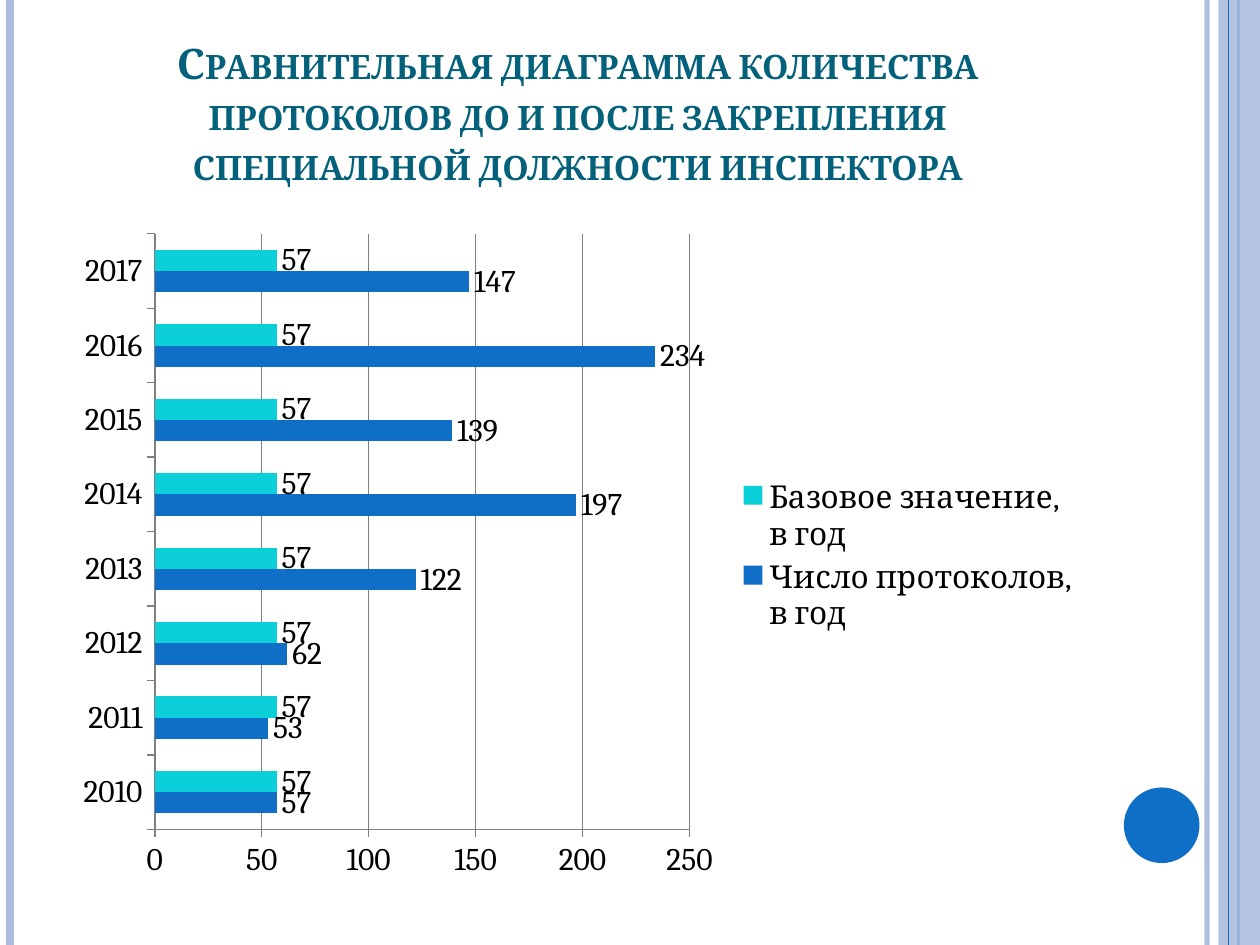
from lxml import etree
from pptx import Presentation
from pptx.chart.data import CategoryChartData
from pptx.dml.color import RGBColor
from pptx.enum.chart import XL_CHART_TYPE, XL_LABEL_POSITION, XL_LEGEND_POSITION, XL_TICK_MARK
from pptx.enum.shapes import MSO_CONNECTOR, MSO_SHAPE
from pptx.enum.text import MSO_ANCHOR, PP_ALIGN
from pptx.oxml.ns import qn
from pptx.util import Inches, Pt

BAR_CLUSTERED = XL_CHART_TYPE.BAR_CLUSTERED
OUTSIDE_END = XL_LABEL_POSITION.OUTSIDE_END
LEGEND_RIGHT = XL_LEGEND_POSITION.RIGHT
TICK_OUTSIDE = XL_TICK_MARK.OUTSIDE
STRAIGHT = MSO_CONNECTOR.STRAIGHT
RECTANGLE, OVAL = MSO_SHAPE.RECTANGLE, MSO_SHAPE.OVAL
BOTTOM, CENTER = MSO_ANCHOR.BOTTOM, PP_ALIGN.CENTER

PALE = RGBColor(0xAB, 0xBB, 0xDF)
BLUE = RGBColor(0x0F, 0x6F, 0xC6)
SKY = RGBColor(0x00, 0x9D, 0xD9)
CYAN = RGBColor(0x0B, 0xD0, 0xD9)
TEAL = RGBColor(0x04, 0x61, 0x7B)
GRAY = RGBColor(0x80, 0x80, 0x80)
BLACK = RGBColor(0, 0, 0)

FONT = "Cambria"
WIDTH, HEIGHT = 10, 7.5
LEFT, CONTENT_WIDTH = 0.5, 8.17

TITLE = ("Сравнительная диаграмма количества протоколов до и после "
         "закрепления специальной должности инспектора")
YEARS = [str(year) for year in range(2010, 2018)]
BASELINE = 57
SERIES = [
    ("Число протоколов, в год", [57, 53, 62, 122, 197, 139, 234, 147], BLUE),
    ("Столбец1", [], SKY),
    ("Базовое значение, в год", [BASELINE] * len(YEARS), CYAN),
]
# x, colour, width in points, opacity in percent
BACK_STRIPES = [(9.58, PALE, 3, 93), (0.08, PALE, 4.5, 100), (9.83, BLUE, 1.5, 100)]
FRONT_STRIPES = [(9.75, BLUE, 0.75, 100)]


def set_opacity(fill_parent, percent):
    color = fill_parent.find(".//" + qn("a:srgbClr"))
    etree.SubElement(color, qn("a:alpha")).set("val", str(percent * 1000))


def add_stripes(slide, stripes):
    for x, color, width, opacity in stripes:
        stripe = slide.shapes.add_connector(
            STRAIGHT, Inches(x), 0, Inches(x), Inches(HEIGHT))
        stripe.line.color.rgb = color
        stripe.line.width = Pt(width)
        properties = stripe._element.spPr
        if opacity < 100:
            set_opacity(properties, opacity)
        etree.SubElement(properties, qn("a:effectLst"))


def add_plain_shape(slide, kind, box, color):
    shape = slide.shapes.add_shape(kind, *map(Inches, box))
    shape.shadow.inherit = False
    shape.fill.solid()
    shape.fill.fore_color.rgb = color
    shape.line.fill.background()
    return shape


def add_text(slide, text, box, size, color, bold=False, small_caps=False):
    frame = slide.shapes.add_textbox(*map(Inches, box)).text_frame
    frame.word_wrap = True
    frame.vertical_anchor = BOTTOM
    para = frame.paragraphs[0]
    para.alignment = CENTER
    span = para.add_run()
    span.text = text
    span.font.name, span.font.size, span.font.bold = FONT, Pt(size), bold
    span.font.color.rgb = color
    if small_caps:
        span.font._element.set("cap", "small")


def style_line(line):
    line.color.rgb = GRAY
    line.width = Pt(0.8)


def add_protocol_chart(slide, box):
    data = CategoryChartData()
    data.categories = YEARS
    for name, values, _ in SERIES:
        data.add_series(name, values)
    chart = slide.shapes.add_chart(BAR_CLUSTERED, *map(Inches, box), data).chart
    chart.has_title = False
    chart.font.name, chart.font.size = FONT, Pt(18)
    chart.font.color.rgb = BLACK
    chart.has_legend = True
    chart.legend.position = LEGEND_RIGHT
    chart.legend.include_in_layout = False

    for axis in (chart.category_axis, chart.value_axis):
        axis.major_tick_mark = TICK_OUTSIDE
        style_line(axis.format.line)
    chart.value_axis.has_major_gridlines = True
    style_line(chart.value_axis.major_gridlines.format.line)

    plot = chart.plots[0]
    plot.vary_by_categories = False
    plot.gap_width, plot.overlap = 150, 0
    for series, (_, _, color) in zip(plot.series, SERIES):
        series.format.fill.solid()
        series.format.fill.fore_color.rgb = color
        series.data_labels.show_value = True
        series.data_labels.position = OUTSIDE_END


def main():
    deck = Presentation()
    deck.slide_width, deck.slide_height = Inches(WIDTH), Inches(HEIGHT)
    slide = deck.slides.add_slide(deck.slide_layouts[6])

    add_stripes(slide, BACK_STRIPES)
    band = add_plain_shape(slide, RECTANGLE, (9.67, 0, WIDTH - 9.67, HEIGHT), PALE)
    set_opacity(band._element.spPr, 87)
    add_stripes(slide, FRONT_STRIPES)
    add_plain_shape(slide, OVAL, (8.92, 6.25, 0.6, 0.6), BLUE)

    add_text(slide, TITLE, (LEFT, 0.3, CONTENT_WIDTH, 1.25), 24, TEAL,
             bold=True, small_caps=True)
    add_protocol_chart(slide, (LEFT, 1.75, CONTENT_WIDTH, 5.33))
    deck.save("out.pptx")


if __name__ == "__main__":
    main()
